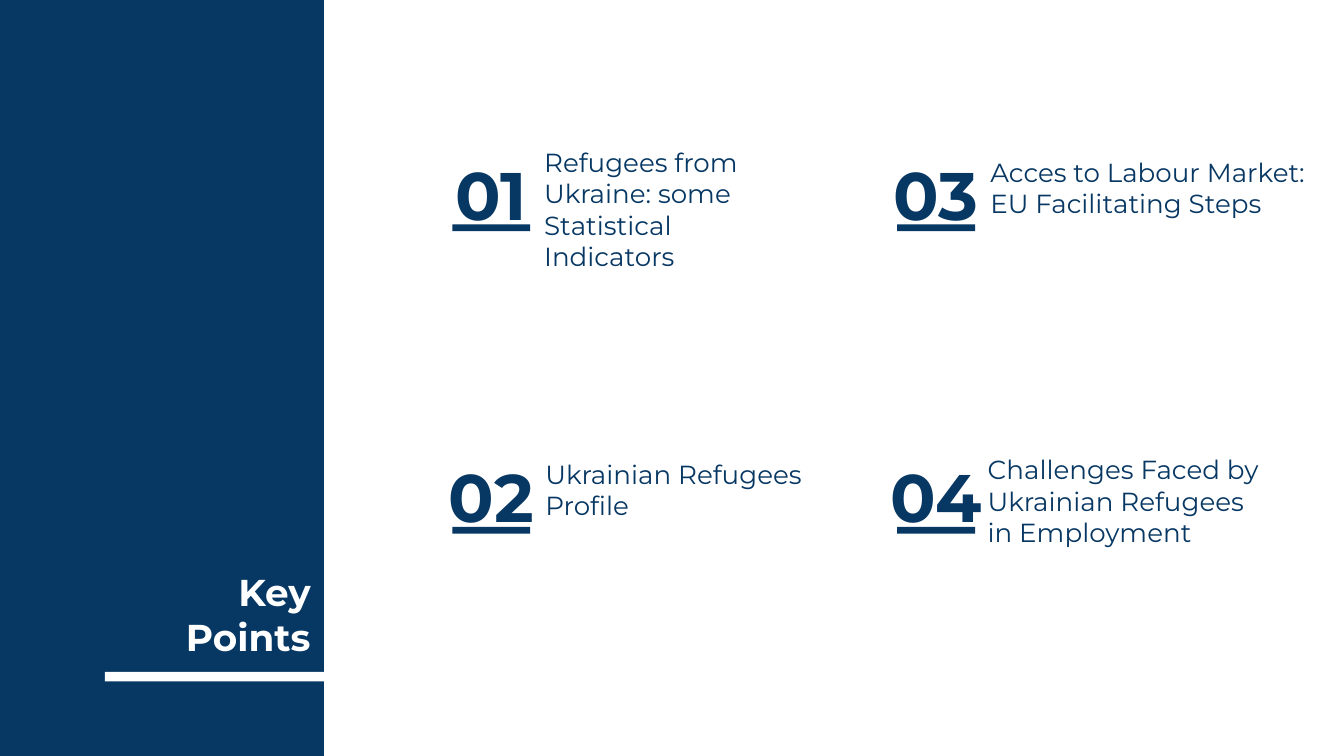
import pptx
import pptx.dml.color
import pptx.enum.shapes
import pptx.enum.text
import pptx.util

NAVY = "073763"
WHITE = "FFFFFF"
FONT = "Montserrat"
CELL = 0.1  # inches; the grid has 100 columns and 56.25 rows
COLUMNS, ROWS = 100, 56.25

ALIGN = pptx.enum.text.PP_ALIGN
ANCHOR = pptx.enum.text.MSO_ANCHOR


def color(value):
    return pptx.dml.color.RGBColor.from_string(value)


def cells(count):
    """Turn a number of grid cells into a length."""
    return pptx.util.Inches(count * CELL)


def write(para, text, size=14, fill=NAVY, bold=False, align=ALIGN.LEFT):
    para.alignment = align
    span = para.add_run()
    span.text = text
    span.font.name = FONT
    span.font.size = pptx.util.Pt(size)
    span.font.bold = bold
    span.font.color.rgb = color(fill)


class SlideBuilder:
    """Draws on the current slide, with lengths in grid cells."""

    def __init__(self, deck):
        self.page = deck.slides.add_slide(deck.slide_layouts[6])
        self.page.background.fill.solid()
        self.page.background.fill.fore_color.rgb = color(WHITE)

    def bar(self, left, top, width, height, fill=NAVY):
        shape = self.page.shapes.add_shape(
            pptx.enum.shapes.MSO_SHAPE.RECTANGLE,
            cells(left), cells(top), cells(width), cells(height))
        shape.shadow.inherit = False
        shape.fill.solid()
        shape.fill.fore_color.rgb = color(fill)
        shape.line.fill.background()

    def text(self, left, top, width, height, lines,
             anchor=ANCHOR.MIDDLE, **style):
        box = self.page.shapes.add_textbox(
            cells(left), cells(top), cells(width), cells(height))
        frame = box.text_frame
        frame.word_wrap = True
        frame.vertical_anchor = anchor
        frame.margin_left = frame.margin_right = cells(1)
        frame.margin_top = frame.margin_bottom = cells(1)
        for index, line in enumerate(lines):
            para = frame.add_paragraph() if index else frame.paragraphs[0]
            write(para, line, **style)

    def number(self, left, top, label):
        """Draw a large number with a rule under it."""
        self.text(left, top, 9.1, 5.6, [label],
                  size=36, bold=True, align=ALIGN.CENTER)
        self.bar(left + 1.65, top + 5.1, 5.8, 0.5)


def main():
    deck = pptx.Presentation()
    deck.slide_width = cells(COLUMNS)
    deck.slide_height = cells(ROWS)
    slide = SlideBuilder(deck)

    slide.bar(0, 0, 24.1, ROWS)
    slide.bar(7.8, 50, 22.4, 0.7, fill=WHITE)
    slide.text(7, 38.1, 17.1, 11.9, ["Key Points"], anchor=ANCHOR.BOTTOM,
               size=20, fill=WHITE, bold=True, align=ALIGN.RIGHT)

    number_columns = (32, 65.1)
    number_rows = (11.6, 34.1)
    # Each topic: left, top, width and height of its text, then its lines
    topics = [
        (39.5, 11.3, 19.5, 8.5,
         ["Refugees from Ukraine: some Statistical Indicators"]),
        (39.6, 33.8, 22.8, 5.3, ["Ukrainian Refugees Profile"]),
        (72.7, 11.3, 25.5, 5.3,
         ["Acces to Labour Market:", "EU Facilitating Steps"]),
        (72.5, 34.6, 23.1, 5.3,
         ["Challenges Faced by Ukrainian Refugees in Employment"]),
    ]
    for index, topic in enumerate(topics):
        column, row = divmod(index, len(number_rows))
        slide.text(*topic)
        slide.number(number_columns[column], number_rows[row],
                     f"{index + 1:02}")

    deck.save("out.pptx")


if __name__ == "__main__":
    main()
